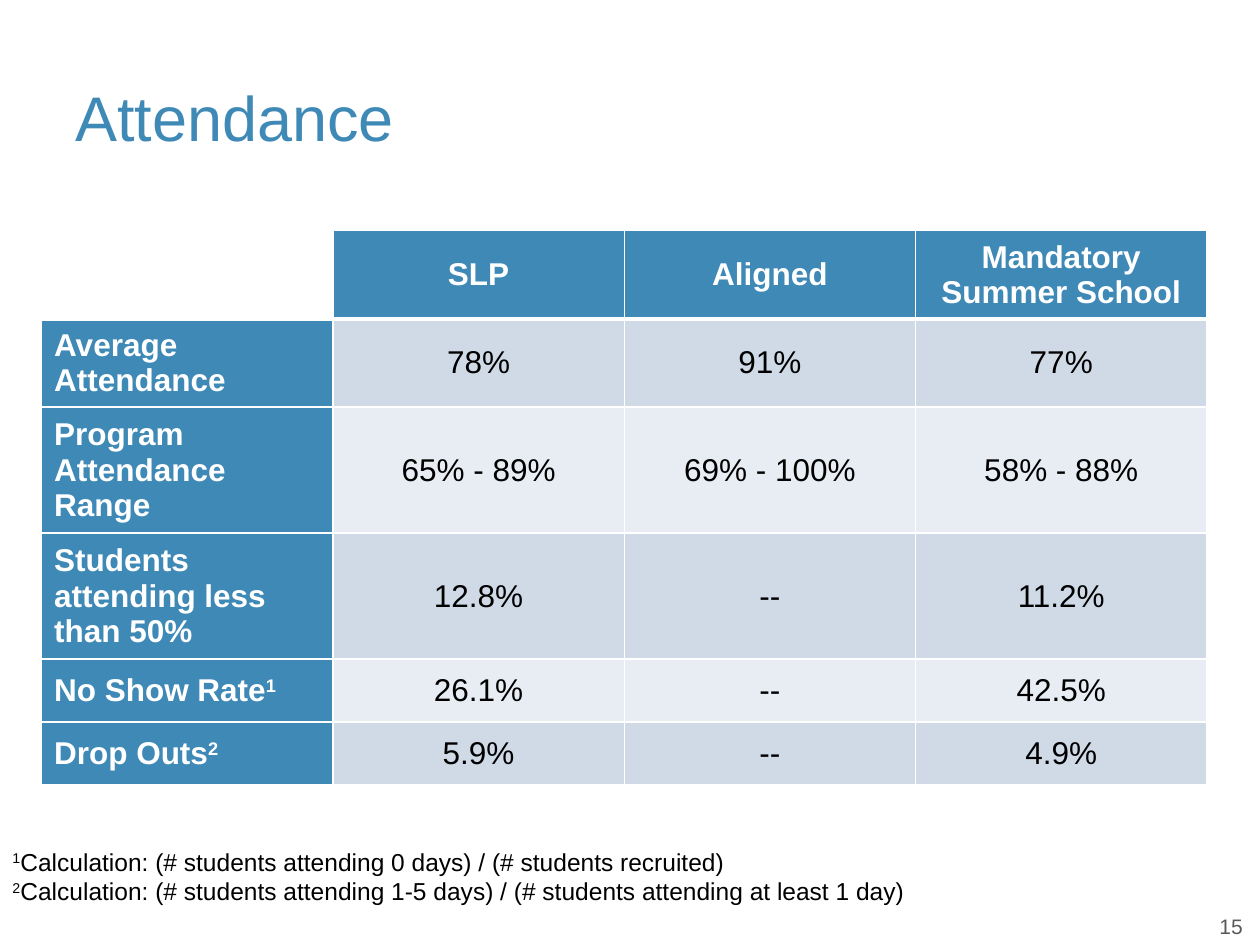
import pptx
import pptx.dml.color
import pptx.enum.text
import pptx.oxml
import pptx.oxml.ns
import pptx.util

Inches = pptx.util.Inches
ALIGN = pptx.enum.text.PP_ALIGN
ANCHOR = pptx.enum.text.MSO_ANCHOR
BLUE, WHITE, BLACK, GRAY = "3F89B7", "FFFFFF", "000000", "595959"
BANDS = ["CFDAE6", "E8EDF3"]


def color(hex_code):
    return pptx.dml.color.RGBColor.from_string(hex_code)


def write_text(frame, text, size=18, ink=BLACK, bold=False, align=ALIGN.LEFT):
    """Fill a text frame, one paragraph a line; text between ^ marks is superscript."""
    frame.word_wrap = True
    for number, line in enumerate(text.split("\n")):
        paragraph = frame.add_paragraph() if number else frame.paragraphs[0]
        paragraph.alignment = align
        for position, piece in enumerate(line.split("^")):
            if not piece:
                continue
            run = paragraph.add_run()
            run.text = piece
            run.font.name = "Arial"
            run.font.size = pptx.util.Pt(size)
            run.font.bold = bold
            run.font.color.rgb = color(ink)
            if position % 2:
                run.font._element.set("baseline", "30000")


presentation = pptx.Presentation()
presentation.slide_width = Inches(10)
presentation.slide_height = Inches(7.5)
slide = presentation.slides.add_slide(presentation.slide_layouts[6])

# Title, footnotes and page number
footnotes = (
    "^1^Calculation: (# students attending 0 days) / (# students recruited)\n"
    "^2^Calculation: (# students attending 1-5 days) / (# students attending at least 1 day)"
)
text_boxes = [
    ((0.5, 0.3, 9, 1.25), "Attendance", 36, BLUE, ANCHOR.MIDDLE),
    ((9.58, 7.2, 0.42, 0.3), "15", 12, GRAY, ANCHOR.TOP),
    ((0, 6.67, 7.42, 0.57), footnotes, 14, BLACK, ANCHOR.TOP),
]
for place, text, size, ink, anchor in text_boxes:
    box = slide.shapes.add_textbox(*map(Inches, place))
    box.text_frame.vertical_anchor = anchor
    write_text(box.text_frame, text, size=size, ink=ink)

# Attendance table
rows = [
    ["", "SLP", "Aligned", "Mandatory Summer School"],
    ["Average Attendance", "78%", "91%", "77%"],
    ["Program Attendance Range", "65% - 89%", "69% - 100%", "58% - 88%"],
    ["Students attending less than 50%", "12.8%", "--", "11.2%"],
    ["No Show Rate^1^", "26.1%", "--", "42.5%"],
    ["Drop Outs^2^", "5.9%", "--", "4.9%"],
]
row_heights = [0.62, 0.5, 0.5, 0.87, 0.5, 0.5]
table = slide.shapes.add_table(
    len(rows), len(rows[0]), Inches(0.33), Inches(1.83), Inches(9.25), Inches(4.41)
).table
for table_row, height in zip(table.rows, row_heights):
    table_row.height = Inches(height)

for row, values in enumerate(rows):
    for column, value in enumerate(values):
        cell = table.cell(row, column)
        heading = row == 0 or column == 0
        cell.vertical_anchor = ANCHOR.MIDDLE
        write_text(
            cell.text_frame,
            value,
            ink=WHITE if heading else BLACK,
            bold=heading,
            align=ALIGN.CENTER if column else ALIGN.LEFT,
        )
        # Borders must precede the fill in the cell properties
        properties = cell._tc.get_or_add_tcPr()
        for side in "LRTB":
            thick = (row == 0 and side == "B") or (row == 1 and side == "T")
            properties.append(pptx.oxml.parse_xml(
                f'<a:ln{side} {pptx.oxml.ns.nsdecls("a")} w="{38100 if thick else 12700}">'
                f'<a:solidFill><a:srgbClr val="{WHITE}"/></a:solidFill></a:ln{side}>'
            ))
        cell.fill.solid()
        if row == column == 0:
            fill = WHITE
        else:
            fill = BLUE if heading else BANDS[(row - 1) % 2]
        cell.fill.fore_color.rgb = color(fill)

presentation.save("out.pptx")
